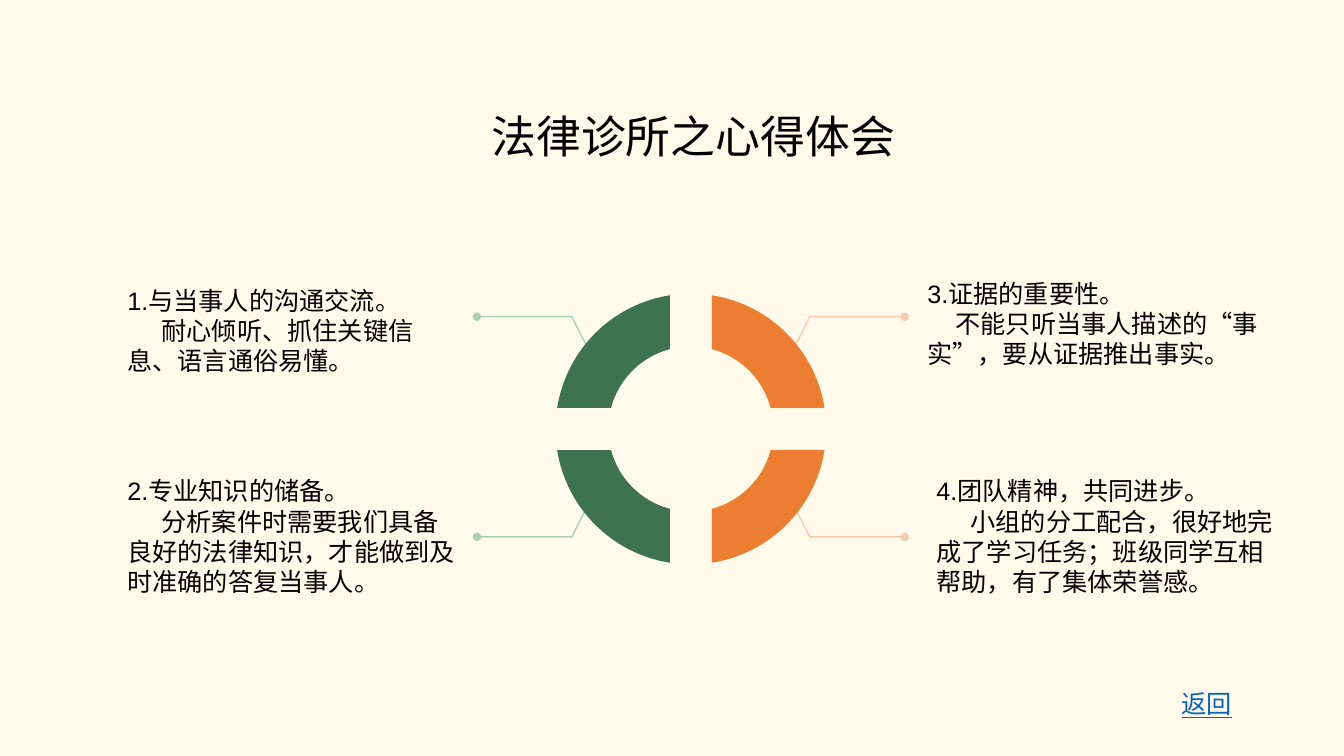
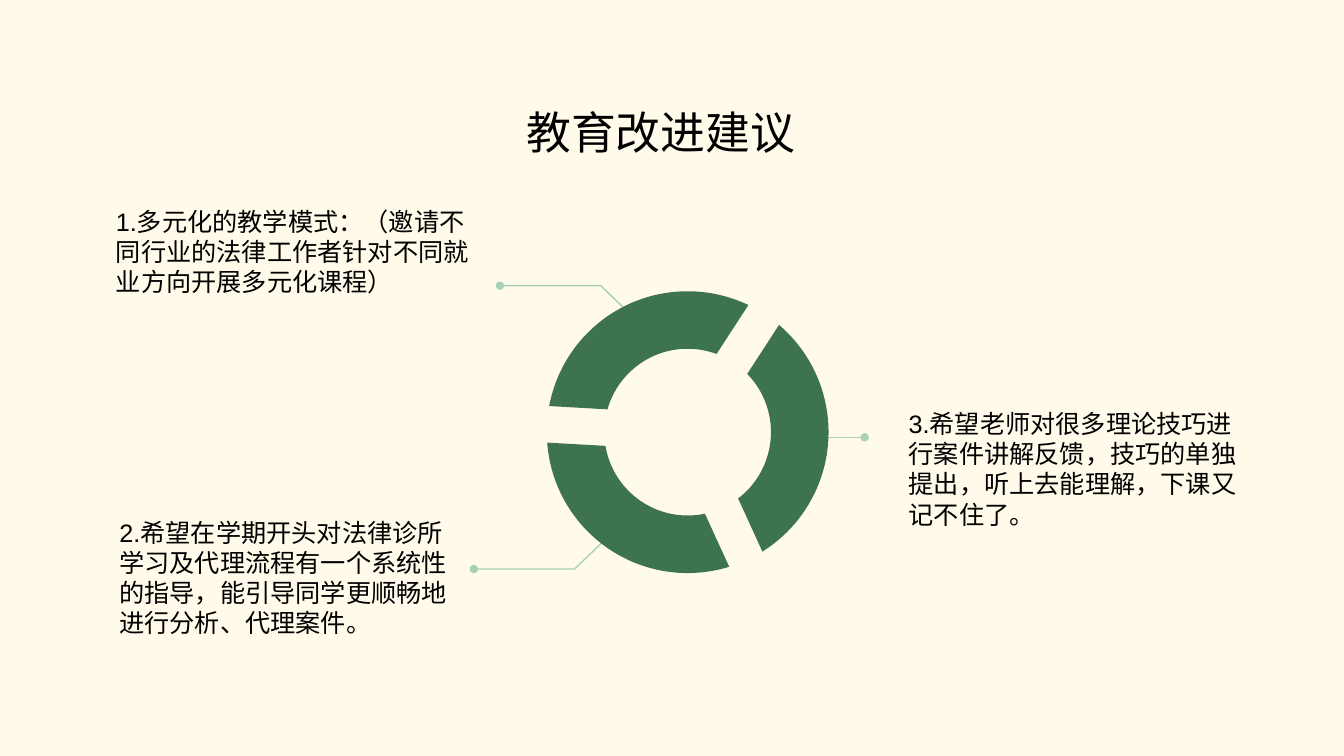
"""Build two slides on a law clinic: lessons learned and teaching suggestions."""
from math import asin, cos, degrees, radians, sin, tan

from lxml import etree
from pptx import Presentation
from pptx import util as u
from pptx.dml.color import RGBColor
from pptx.enum import shapes, text
from pptx.oxml.ns import qn


class Theme:
    font = "Arial"
    paper, ink, link = "FFFAEA", "000000", "0563C1"
    green, mint = "3D7351", "A8D1B7"
    orange, peach = "ED7D31", "F8CBAD"
    head, body, line = 32, 18, 1


PAGES = [
    {
        "title": ("法律诊所之心得体会", 9.12, 1.91),
        "ring": {"mid": (17.41, 10.81), "radii": (3.41, 2.08), "half": 0.53,
                 "gaps": (0, 90, 180, 270),
                 "fills": (Theme.orange, Theme.green, Theme.green, Theme.orange)},
        "bend": (0.36, 0.71, 2.39),
        "leads": [(20.05, 8.69, 1, -1, Theme.peach), (14.77, 8.69, -1, -1, Theme.mint),
                  (20.05, 12.82, 1, 1, Theme.peach), (14.77, 12.82, -1, 1, Theme.mint)],
        "rules": [],
        "notes": [
            ((2.96, 7.06, 8.23, 2.57), 0.86,
             ["1.与当事人的沟通交流。", "耐心倾听、抓住关键信息、语言通俗易懂。"]),
            ((2.96, 11.86, 8.76, 3.33), 0.86,
             ["2.专业知识的储备。",
              "分析案件时需要我们具备良好的法律知识，才能做到及时准确的答复当事人。"]),
            ((23.12, 6.88, 9.35, 2.57), 0.71,
             ["3.证据的重要性。", "不能只听当事人描述的“事实”，要从证据推出事实。"]),
            ((23.35, 11.86, 9.12, 3.33), 0.86,
             ["4.团队精神，共同进步。",
              "小组的分工配合，很好地完成了学习任务；班级同学互相帮助，有了集体荣誉感。"]),
        ],
        "back": ("返回", (29.53, 17.22, 3.51, 1.02)),
    },
    {
        "title": ("教育改进建议", 8.3, 1.81),
        "ring": {"mid": (17.33, 10.89), "radii": (3.55, 2.1), "half": 0.46,
                 "gaps": (-57, 65.4, 183.2), "fills": (Theme.green,) * 3},
        "bend": (0.74, 0.71, 2.54),
        "leads": [(15.88, 7.91, -1, -1, Theme.mint), (15.22, 13.63, -1, 1, Theme.mint)],
        "rules": [(20.6, 11.02, 21.79, 11.02, Theme.mint)],
        "notes": [
            ((2.67, 5.07, 9.47, 2.57), 0,
             ["1.多元化的教学模式：（邀请不同行业的法律工作者针对不同就业方向开展多元化课程）"]),
            ((2.76, 12.9, 8.81, 3.33), 0,
             ["2.希望在学期开头对法律诊所学习及代理流程有一个系统性的指导，"
              "能引导同学更顺畅地进行分析、代理案件。"]),
            ((22.65, 10.16, 8.89, 3.33), 0,
             ["3.希望老师对很多理论技巧进行案件讲解反馈，技巧的单独提出，"
              "听上去能理解，下课又记不住了。"]),
        ],
        "back": None,
    },
]


def tint(code):
    return RGBColor.from_string(code)


def write(slide, box, lines, size=Theme.body, color=Theme.ink, indent=0):
    shape = slide.shapes.add_textbox(*map(u.Cm, box))
    frame = shape.text_frame
    frame.word_wrap = True
    frame.text = "\n".join(lines)
    for row, para in enumerate(frame.paragraphs):
        if row and indent:
            para._p.get_or_add_pPr().set("indent", str(u.Cm(indent)))
        for run in para.runs:
            run.font.name, run.font.size = Theme.font, u.Pt(size)
            run.font.color.rgb = tint(color)
    return frame


def head(slide, title, left, top):
    frame = write(slide, (left, top, 16.71, 3), [title], Theme.head)
    frame.margin_left = frame.margin_right = frame.margin_top = frame.margin_bottom = 0
    frame.vertical_anchor = text.MSO_ANCHOR.MIDDLE
    frame.paragraphs[0].alignment = text.PP_ALIGN.CENTER


def outline(slide, points, close):
    first, *rest = [(u.Cm(x), u.Cm(y)) for x, y in points]
    pen = slide.shapes.build_freeform(*first)
    pen.add_line_segments(rest, close=close)
    shape = pen.convert_to_shape()
    shape.shadow.inherit = False
    return shape


def dot(shape, color):
    shape.line.color.rgb = tint(color)
    shape.line.width = u.Pt(Theme.line)
    etree.SubElement(shape.line._get_or_add_ln(), qn("a:tailEnd"), type="oval")


def lead(slide, x, y, side, rise, color, bend):
    wide, tall, run = bend
    knee, level = x + side * wide, y + rise * tall
    shape = outline(slide, [(x, y), (knee, level), (knee + side * run, level)], False)
    shape.fill.background()
    dot(shape, color)


def rule(slide, x, y, right, low, color):
    line = slide.shapes.add_connector(shapes.MSO_CONNECTOR.STRAIGHT,
                                      *map(u.Cm, (x, y, right, low)))
    dot(line, color)
    etree.SubElement(line._element.spPr, qn("a:effectLst"))


def arc(mid, radius, half, start, end):
    """Give a start point, then three curve points for each part of a quadrant."""
    trim = degrees(asin(half / radius))
    low, high = start + trim, end - trim
    stops = [low, *(q for q in range(-360, 361, 90) if low < q < high), high]

    def spot(turn, pull=0):
        t = radians(turn)
        return (mid[0] + radius * (cos(t) - pull * sin(t)),
                mid[1] + radius * (sin(t) + pull * cos(t)))

    points = [spot(low)]
    for a, b in zip(stops, stops[1:]):
        pull = 4 / 3 * tan(radians(b - a) / 4)
        points += [spot(a, pull), spot(b, -pull), spot(b)]
    return points


def curve(shape, starts):
    """Join each three line steps from the given places into one curve."""
    steps = list(shape._element.iter(qn("a:lnTo")))
    for at in starts:
        bend = etree.Element(qn("a:cubicBezTo"))
        steps[at].addprevious(bend)
        for step in steps[at:at + 3]:
            bend.append(step[0])
            step.getparent().remove(step)


def ring(slide, mid, radii, half, gaps, fills):
    ends = gaps[1:] + (gaps[0] + 360,)
    for start, end, fill in zip(gaps, ends, fills):
        outer, inner = (arc(mid, r, half, start, end) for r in radii)
        shape = outline(slide, outer + inner[::-1], True)
        turn = len(outer)
        curve(shape, [*range(0, turn - 1, 3), *range(turn, turn + len(inner) - 1, 3)])
        shape.fill.solid()
        shape.fill.fore_color.rgb = tint(fill)
        shape.line.fill.background()


def build(deck, page):
    slide = deck.slides.add_slide(deck.slide_layouts[6])
    slide.background.fill.solid()
    slide.background.fill.fore_color.rgb = tint(Theme.paper)
    head(slide, *page["title"])
    for item in page["rules"]:
        rule(slide, *item)
    for item in page["leads"]:
        lead(slide, *item, page["bend"])
    ring(slide, **page["ring"])
    for box, indent, lines in page["notes"]:
        write(slide, box, lines, indent=indent)
    if page["back"]:
        label, box = page["back"]
        frame = write(slide, box, [label], color=Theme.link)
        frame.paragraphs[0].runs[0].font.underline = True


def main():
    deck = Presentation()
    deck.slide_width, deck.slide_height = u.Cm(33.87), u.Cm(19.05)
    for page in PAGES:
        build(deck, page)
    deck.save("out.pptx")


if __name__ == "__main__":
    main()
